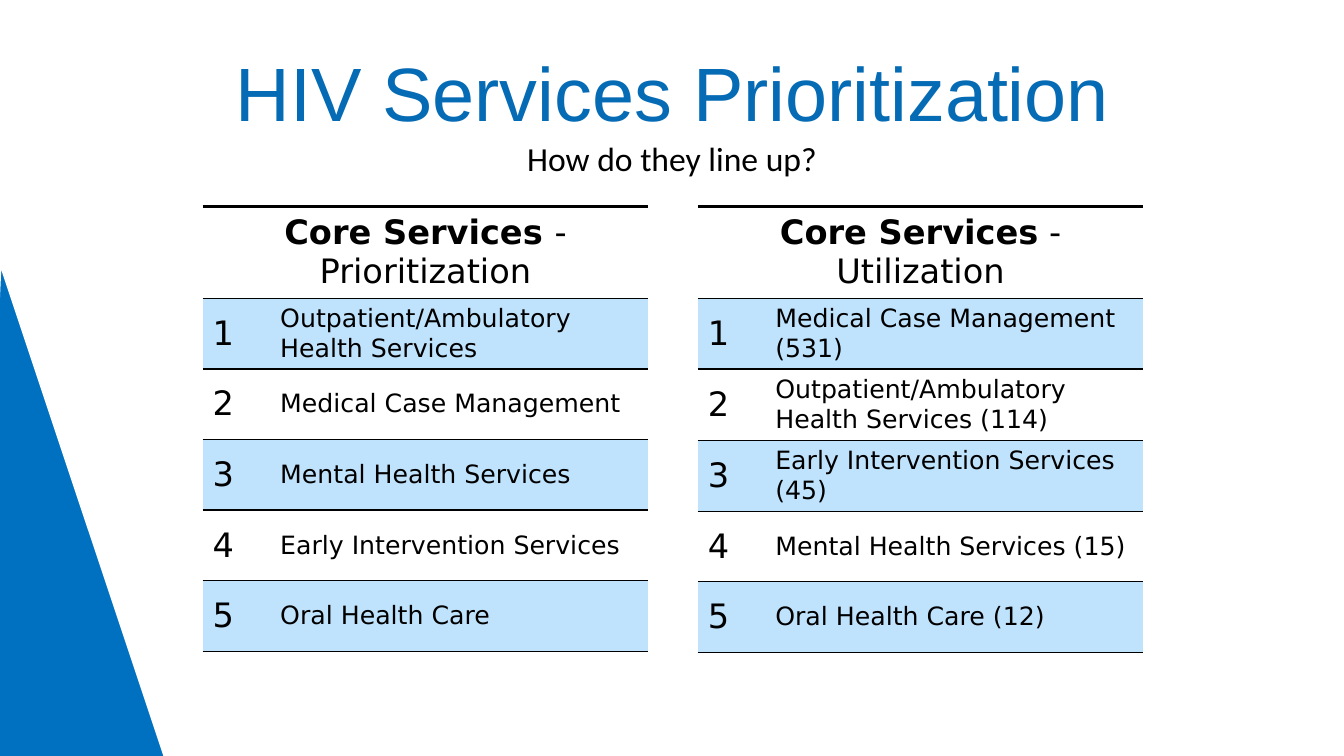
"""Builds the HIV services slide comparing priority ranks with utilization ranks."""
from dataclasses import dataclass

from lxml.etree import SubElement
from pptx import Presentation
from pptx.dml.color import RGBColor
from pptx.enum.text import MSO_ANCHOR as Anchor, MSO_AUTO_SIZE as AutoSize, PP_ALIGN as Align
from pptx.oxml.ns import qn
from pptx.slide import Slide
from pptx.table import _Cell as Cell
from pptx.text.text import _Paragraph as Paragraph
from pptx.util import Inches, Pt

BLACK, WHITE, BAND = "000000", "FFFFFF", "C0E3FD"
TITLE_BLUE, WEDGE_BLUE = "056BB5", "0070C0"
TABLE_FONT = "DejaVu Sans"
WEDGE_POINTS = [(-0.08, 7.65), (-0.08, 3.18), (-0.04, 2.3), (1.74, 7.64)]
TABLE_TOP, COLUMN_WIDTHS = 2.05, (0.67, 3.75)


@dataclass(frozen=True)
class Ranking:
    left: float
    heading: str
    measure: str
    services: tuple[str, ...]
    heights: tuple[float, ...]


RANKINGS = [
    Ranking(2.01, "Core Services ", "- Prioritization", (
        "Outpatient/Ambulatory Health Services",
        "Medical Case Management",
        "Mental Health Services",
        "Early Intervention Services",
        "Oral Health Care",
    ), (0.91, 0.7, 0.7, 0.7, 0.7, 0.7)),
    Ranking(6.92, "Core Services", " - Utilization", (
        "Medical Case Management (531)",
        "Outpatient/Ambulatory Health Services (114)",
        "Early Intervention Services (45)",
        "Mental Health Services (15)",
        "Oral Health Care (12)",
    ), (0.91, 0.69, 0.71, 0.7, 0.7, 0.7)),
]


def color(code: str) -> RGBColor:
    return RGBColor.from_string(code)


def add_run(paragraph: Paragraph, text: str, size: float, font: str = TABLE_FONT,
            code: str = BLACK, bold: bool = False) -> None:
    run = paragraph.add_run()
    run.text = text
    run.font.size = Pt(size)
    run.font.name = font
    run.font.bold = bold
    run.font.color.rgb = color(code)


def style_cell(cell: Cell, fill: str | None, top: float) -> None:
    cell.vertical_anchor = Anchor.MIDDLE
    properties = cell._tc.get_or_add_tcPr()
    for side, width in (("L", 0), ("R", 0), ("T", top), ("B", 1)):
        border = SubElement(properties, qn(f"a:ln{side}"), w=str(Pt(width)))
        if width:
            paint = SubElement(border, qn("a:solidFill"))
            SubElement(paint, qn("a:srgbClr"), val=BLACK)
        else:
            SubElement(border, qn("a:noFill"))
    if fill:
        cell.fill.solid()
        cell.fill.fore_color.rgb = color(fill)
    else:
        cell.fill.background()


def add_ranking(slide: Slide, ranking: Ranking) -> None:
    table = slide.shapes.add_table(
        len(ranking.heights), len(COLUMN_WIDTHS), Inches(ranking.left), Inches(TABLE_TOP),
        Inches(sum(COLUMN_WIDTHS)), Inches(sum(ranking.heights))).table
    table.first_row = table.horz_banding = False
    for column, width in zip(table.columns, COLUMN_WIDTHS):
        column.width = Inches(width)
    for index, (row, height) in enumerate(zip(table.rows, ranking.heights)):
        row.height = Inches(height)
        for cell in row.cells:
            style_cell(cell, BAND if index % 2 else None, 1 if index else 2.25)

    header = table.cell(0, 0)
    header.merge(table.cell(0, 1))
    heading = header.text_frame.paragraphs[0]
    heading.alignment = Align.CENTER
    add_run(heading, ranking.heading, 24, bold=True)
    add_run(heading, ranking.measure, 24)

    for rank, service in enumerate(ranking.services, start=1):
        add_run(table.cell(rank, 0).text_frame.paragraphs[0], str(rank), 24)
        add_run(table.cell(rank, 1).text_frame.paragraphs[0], service, 18)


def add_title(slide: Slide) -> None:
    title = slide.shapes.title
    title.left, title.top = Inches(0.92), Inches(0.24)
    title.width, title.height = Inches(11.5), Inches(1.45)
    frame = title.text_frame
    frame.auto_size = AutoSize.NONE
    frame.vertical_anchor = Anchor.MIDDLE
    heading = frame.paragraphs[0]
    heading.alignment = Align.CENTER
    heading.line_spacing = 0.9
    add_run(heading, "HIV Services Prioritization", 54, "Arial", TITLE_BLUE)


def add_question(slide: Slide) -> None:
    frame = slide.shapes.add_textbox(
        Inches(0.97), Inches(1.36), Inches(11.39), Inches(0.65)).text_frame
    frame.word_wrap = True
    question = frame.paragraphs[0]
    question.alignment = Align.CENTER
    question.line_spacing = 0.9
    question.space_before = Pt(10)
    add_run(question, "How do they line up?", 24, "Calibri")


def add_wedge(slide: Slide) -> None:
    start, *corners = [(Inches(x), Inches(y)) for x, y in WEDGE_POINTS]
    builder = slide.shapes.build_freeform(*start)
    builder.add_line_segments(corners, close=True)
    wedge = builder.convert_to_shape()
    wedge.shadow.inherit = False
    wedge.fill.solid()
    wedge.fill.fore_color.rgb = color(WEDGE_BLUE)
    wedge.line.color.rgb = color(WHITE)
    wedge.line.width = Pt(10)


def main() -> None:
    presentation = Presentation()
    presentation.slide_width, presentation.slide_height = Inches(13.33), Inches(7.5)
    slide = presentation.slides.add_slide(presentation.slide_layouts[5])
    add_title(slide)
    add_question(slide)
    add_wedge(slide)
    for ranking in RANKINGS:
        add_ranking(slide, ranking)
    presentation.save("out.pptx")


if __name__ == "__main__":
    main()
